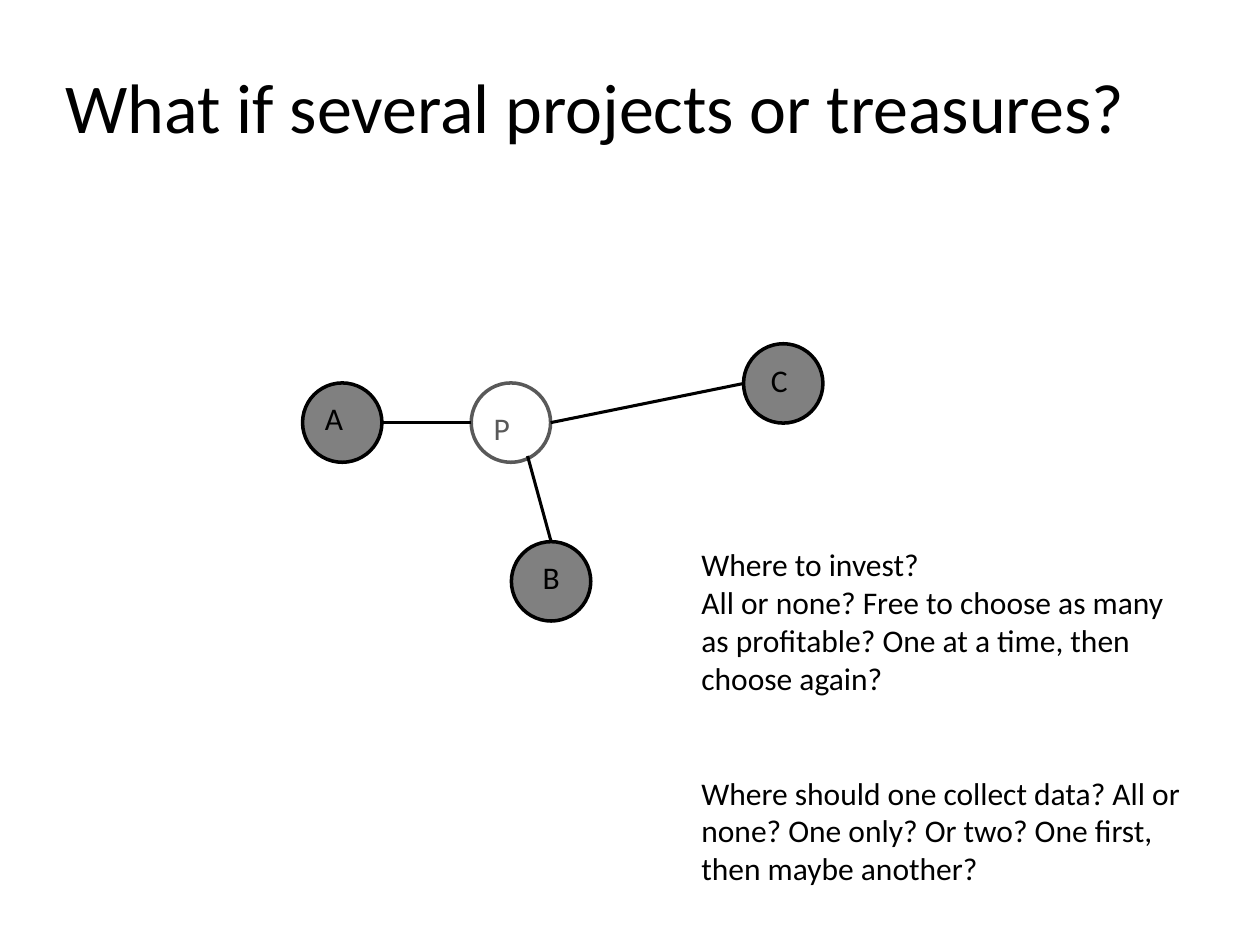
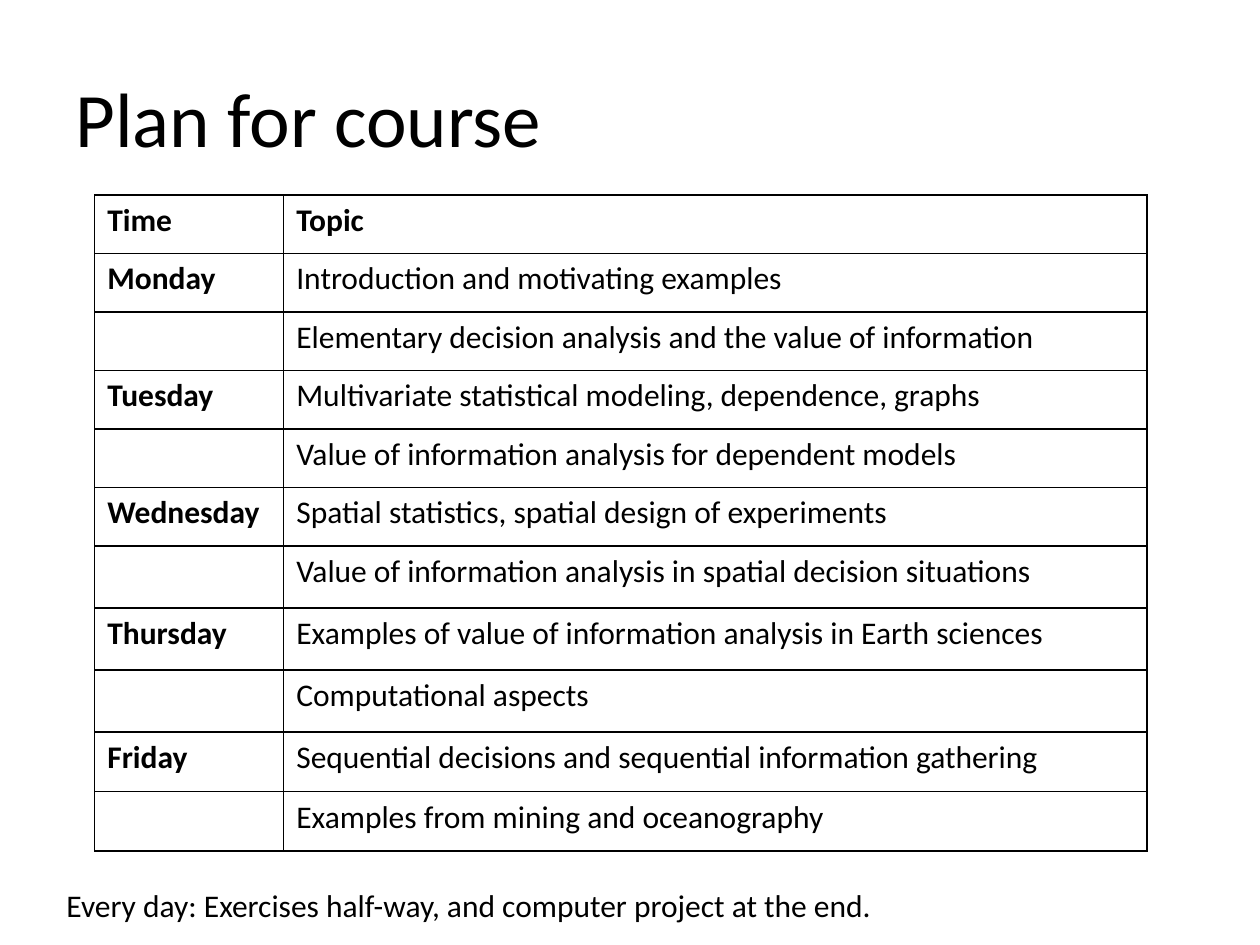
from pptx import Presentation as Deck
from pptx.dml.color import RGBColor as Rgb
from pptx.enum.shapes import MSO_CONNECTOR as Link, MSO_SHAPE as Shape
from pptx.enum.text import MSO_ANCHOR as Anchor, MSO_AUTO_SIZE as Fit, PP_ALIGN as Align
from pptx.oxml import parse_xml
from pptx.oxml.ns import nsdecls
from pptx.util import Cm, Pt
from lxml.etree import SubElement

COLORS = {"ink": "000000", "dim": "595959", "node": "808080"}
FONT = "Calibri"
BODY = {"name": FONT, "size": Pt(18), "bold": False}
FRAME = {"word_wrap": True, "auto_size": Fit.SHAPE_TO_FIT_TEXT}
HEAD = {"word_wrap": True, "auto_size": Fit.NONE, "vertical_anchor": Anchor.MIDDLE}
PLAIN = {"first_row": False, "horz_banding": False}

SIZE = 1.6
NODES = {
    "P": {"at": (3.4, 0.79), "label": (0.2, 0.41), "fill": None, "ink": "dim"},
    "B": {"at": (4.21, 3.99), "label": (0.38, 0.2), "fill": "node", "ink": "ink"},
    "A": {"at": (0, 0.79), "label": (0.2, 0.2), "fill": "node", "ink": "ink"},
    "C": {"at": (8.89, 0), "label": (0.3, 0.23), "fill": "node", "ink": "ink"},
}
TOP, LEFT, RIGHT, LOW = (0.5, 0), (0, 0.5), (1, 0.5), (0.71, 0.92)
EDGES = [("P", LEFT, "A", RIGHT), ("P", LOW, "B", TOP), ("P", RIGHT, "C", LEFT)]

NOTES = [
    ("Where to invest?", 0),
    ("All or none? Free to choose as many as profitable? One at a time, then choose again?", 0),
    ("Where should one collect data? All or none? One only? Or two? One first, then maybe another?", 44),
]
PLAN = [
    ("Time", "Topic"),
    ("Monday", "Introduction and motivating examples"),
    ("", "Elementary decision analysis and the value of information"),
    ("Tuesday", "Multivariate statistical modeling, dependence, graphs"),
    ("", "Value of information analysis for dependent models"),
    ("Wednesday", "Spatial statistics, spatial design of experiments"),
    ("", "Value of information analysis in spatial decision situations"),
    ("Thursday", "Examples of value of information analysis in Earth sciences"),
    ("", "Computational aspects"),
    ("Friday", "Sequential decisions and sequential information gathering"),
    ("", "Examples from mining and oceanography"),
]
WIDTHS = [3.81, 17.4]
ROWS = [1.18] * 6 + [1.25] * 3 + [1.2] * 2


def apply(item, values):
    for key, value in values.items():
        setattr(item, key, value)


def color(name):
    return Rgb.from_string(COLORS[name])


def write(para, text, ink="ink", **extra):
    run = para.add_run()
    run.text = text
    apply(run.font, {**BODY, **extra})
    run.font.color.rgb = color(ink)


def stroke(line, ink, width):
    line.color.rgb = color(ink)
    line.width = Pt(width)


def add_text(slide, box, paras, ink="ink"):
    frame = slide.shapes.add_textbox(*map(Cm, box)).text_frame
    apply(frame, FRAME)
    for i, (text, gap) in enumerate(paras):
        para = frame.add_paragraph() if i else frame.paragraphs[0]
        para.space_before = Pt(gap)
        write(para, text, ink)


def add_slide(deck, title, left, top, size):
    slide = deck.slides.add_slide(deck.slide_layouts[5])
    head = slide.shapes.title
    apply(head, {"left": Cm(left), "top": Cm(top), "width": Cm(23.82), "height": Cm(3.18)})
    apply(head.text_frame, HEAD)
    para = head.text_frame.paragraphs[0]
    para.alignment = Align.LEFT
    write(para, title, size=Pt(size))
    return slide


def add_node(slide, name, left, top, label, fill, ink):
    disc = slide.shapes.add_shape(Shape.OVAL, *map(Cm, (left, top, SIZE, SIZE)))
    disc.shadow.inherit = False
    if fill:
        disc.fill.solid()
        disc.fill.fore_color.rgb = color(fill)
    else:
        disc.fill.background()
    stroke(disc.line, ink, 2)
    add_text(slide, (left + label[0], top + label[1], SIZE, 1.02), [(name, 0)], ink)


def add_graph(slide, left, top):
    def point(name, side):
        x, y = NODES[name]["at"]
        return Cm(left + x + side[0] * SIZE), Cm(top + y + side[1] * SIZE)

    for name, node in NODES.items():
        x, y = node["at"]
        add_node(slide, name, left + x, top + y, node["label"], node["fill"], node["ink"])
    for start, out, end, into in EDGES:
        line = slide.shapes.add_connector(Link.STRAIGHT, *point(start, out), *point(end, into))
        stroke(line.line, "ink", 1.75)
        props = line.line._get_or_add_ln().getparent()
        SubElement(props, "{http://schemas.openxmlformats.org/drawingml/2006/main}effectLst")


def add_border(cell):
    props = cell._tc.get_or_add_tcPr()
    for i, side in enumerate("LRTB"):
        props.insert(i, parse_xml(
            f'<a:ln{side} {nsdecls("a")} w="{Pt(1)}"><a:solidFill>'
            f'<a:srgbClr val="{COLORS["ink"]}"/></a:solidFill></a:ln{side}>'))


def add_plan(slide, left, top):
    box = map(Cm, (left, top, sum(WIDTHS), sum(ROWS)))
    table = slide.shapes.add_table(len(PLAN), len(WIDTHS), *box).table
    apply(table, PLAIN)
    for col, width in zip(table.columns, WIDTHS):
        col.width = Cm(width)
    for r, (texts, height) in enumerate(zip(PLAN, ROWS)):
        table.rows[r].height = Cm(height)
        for c, text in enumerate(texts):
            cell = table.cell(r, c)
            cell.fill.background()
            add_border(cell)
            if text:
                write(cell.text_frame.paragraphs[0], text, bold=r == 0 or c == 0)


def main():
    deck = Deck()
    apply(deck, {"slide_width": Cm(25.4), "slide_height": Cm(19.05)})

    slide = add_slide(deck, "What if several projects or treasures?", 1.07, 0.53, 40)
    add_graph(slide, 6.1, 6.93)
    add_text(slide, (13.89, 10.87, 10.44, 7.19), NOTES)

    slide = add_slide(deck, "Plan for course", 1.27, 0.76, 44)
    add_plan(slide, 1.91, 3.93)
    closing = "Every day: Exercises half-way, and computer project at the end."
    add_text(slide, (1.09, 17.73, 24, 1.02), [(closing, 0)])

    deck.save("out.pptx")


if __name__ == "__main__":
    main()
